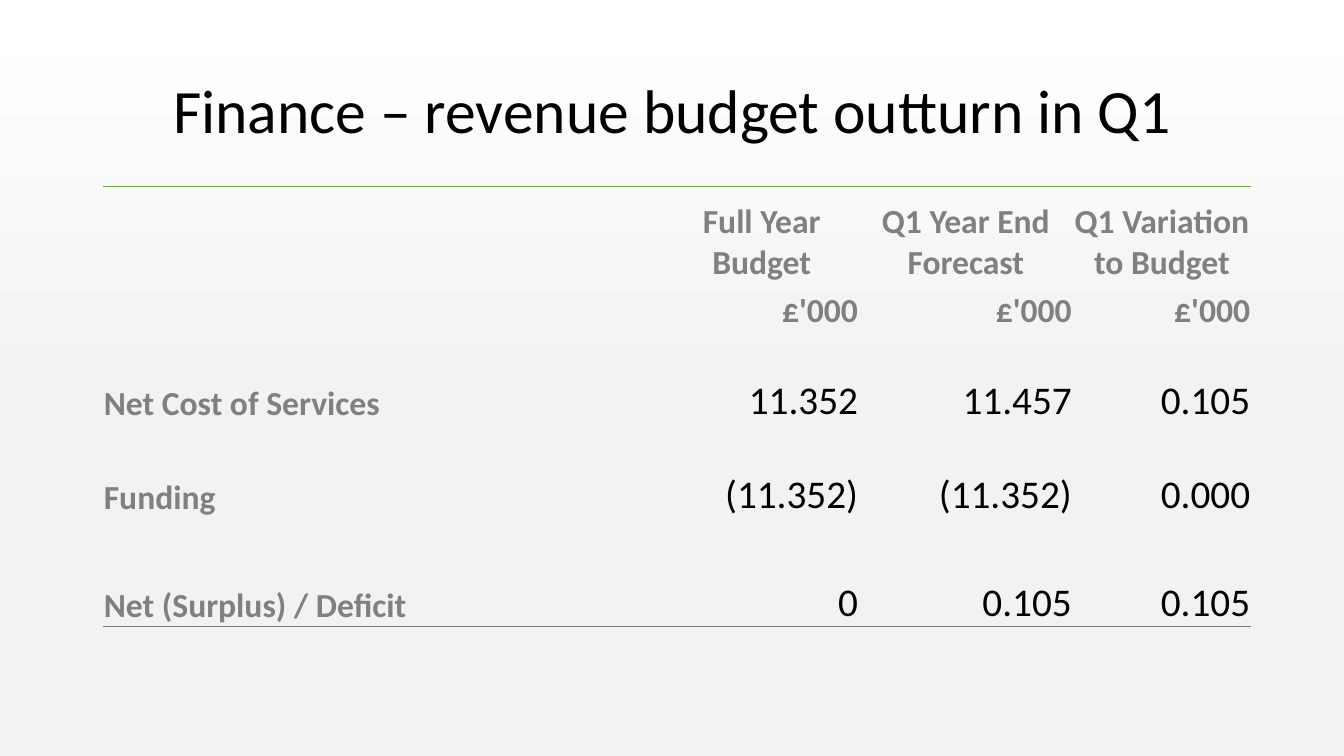
from copy import deepcopy

from lxml.etree import SubElement
from pptx import Presentation
from pptx.dml.color import RGBColor
from pptx.enum.text import MSO_ANCHOR, PP_ALIGN
from pptx.oxml import parse_xml
from pptx.oxml.ns import nsdecls, qn
from pptx.util import Inches, Pt

TITLE = "Finance – revenue budget outturn in Q1"
ROWS = [
    ("", "Full Year Budget", "Q1 Year End Forecast", "Q1 Variation to Budget"),
    ("", "£'000", "£'000", "£'000"),
    ("", "", "", ""),
    ("Net Cost of Services", "11.352", "11.457", "0.105"),
    ("Funding", "(11.352)", "(11.352)", "0.000"),
    ("", "", "", ""),
    ("Net (Surplus) / Deficit", "0", "0.105", "0.105"),
]
COLUMN_WIDTHS = [5.57, 1.93, 2.12, 1.77]
ROW_HEIGHTS = [0.96, 0.48, 0.44, 0.48, 0.94, 0.59, 0.48]
HEADER_ROWS = 2
COLORS = {
    "top": "FFFFFF",
    "base": "F2F2F2",
    "text": "000000",
    "label": "808080",
    "top_rule": "70AD47",
    "bottom_rule": "808080",
}
FONT = "Calibri"
NO_GRID_STYLE = "{2D5ABB26-0587-4C30-8999-92F81FD0307C}"


def style_paragraph(paragraph, size, color, bold, alignment):
    paragraph.alignment = alignment
    font = paragraph.font
    font.name, font.size, font.bold = FONT, Pt(size), bold
    font.color.rgb = RGBColor.from_string(COLORS[color])


def paint_background(page):
    fill = page.background.fill
    fill.gradient()
    fill.gradient_angle = 270
    for stop, position, color in zip(fill.gradient_stops, (0, 0.54), ("top", "base")):
        stop.position = position
        stop.color.rgb = RGBColor.from_string(COLORS[color])
    stops = page._element.find(".//" + qn("a:gsLst"))
    last_stop = deepcopy(stops[-1])
    last_stop.set("pos", "100000")
    stops.append(last_stop)


def add_title(page):
    box = page.shapes.add_textbox(Inches(0.92), Inches(0.4), Inches(11.5), Inches(1.45))
    frame = box.text_frame
    frame.word_wrap = True
    frame.vertical_anchor = MSO_ANCHOR.MIDDLE
    para = frame.paragraphs[0]
    para.text = TITLE
    para.line_spacing = 0.9
    style_paragraph(para, 44, "text", False, PP_ALIGN.CENTER)


def add_border(cell, side, color):
    line = parse_xml(f'<a:{side} {nsdecls("a")} w="{Pt(1)}"/>')
    fill = SubElement(line, qn("a:solidFill"))
    SubElement(fill, qn("a:srgbClr"), val=COLORS[color])
    cell._tc.get_or_add_tcPr().insert(0, line)


def fill_cell(cell, text, row, column):
    cell.fill.background()
    if row == 0:
        add_border(cell, "lnT", "top_rule")
    if row == len(ROWS) - 1:
        add_border(cell, "lnB", "bottom_rule")
    cell.vertical_anchor = MSO_ANCHOR.BOTTOM
    cell.margin_left = cell.margin_right = cell.margin_top = Inches(0.01)
    cell.margin_bottom = 0
    if not text:
        return
    para = cell.text_frame.paragraphs[0]
    para.text = text
    if column == 0:
        alignment = PP_ALIGN.LEFT
    else:
        alignment = PP_ALIGN.CENTER if row == 0 else PP_ALIGN.RIGHT
    if row < HEADER_ROWS or column == 0:
        style_paragraph(para, 24, "label", True, alignment)
    else:
        style_paragraph(para, 28, "text", False, alignment)


def add_budget_table(page):
    frame = page.shapes.add_table(
        len(ROWS), len(COLUMN_WIDTHS), Inches(1.02), Inches(1.85),
        Inches(sum(COLUMN_WIDTHS)), Inches(sum(ROW_HEIGHTS)),
    )
    table = frame.table
    table.first_row = table.horz_banding = False
    table._tbl.find(".//" + qn("a:tableStyleId")).text = NO_GRID_STYLE
    for column, width in zip(table.columns, COLUMN_WIDTHS):
        column.width = Inches(width)
    for row, height in zip(table.rows, ROW_HEIGHTS):
        row.height = Inches(height)
    for row, texts in enumerate(ROWS):
        for column, text in enumerate(texts):
            fill_cell(table.cell(row, column), text, row, column)


def main():
    deck = Presentation()
    deck.slide_width, deck.slide_height = Inches(13.33), Inches(7.5)
    page = deck.slides.add_slide(deck.slide_layouts[6])
    paint_background(page)
    add_title(page)
    add_budget_table(page)
    deck.save("out.pptx")


if __name__ == "__main__":
    main()
